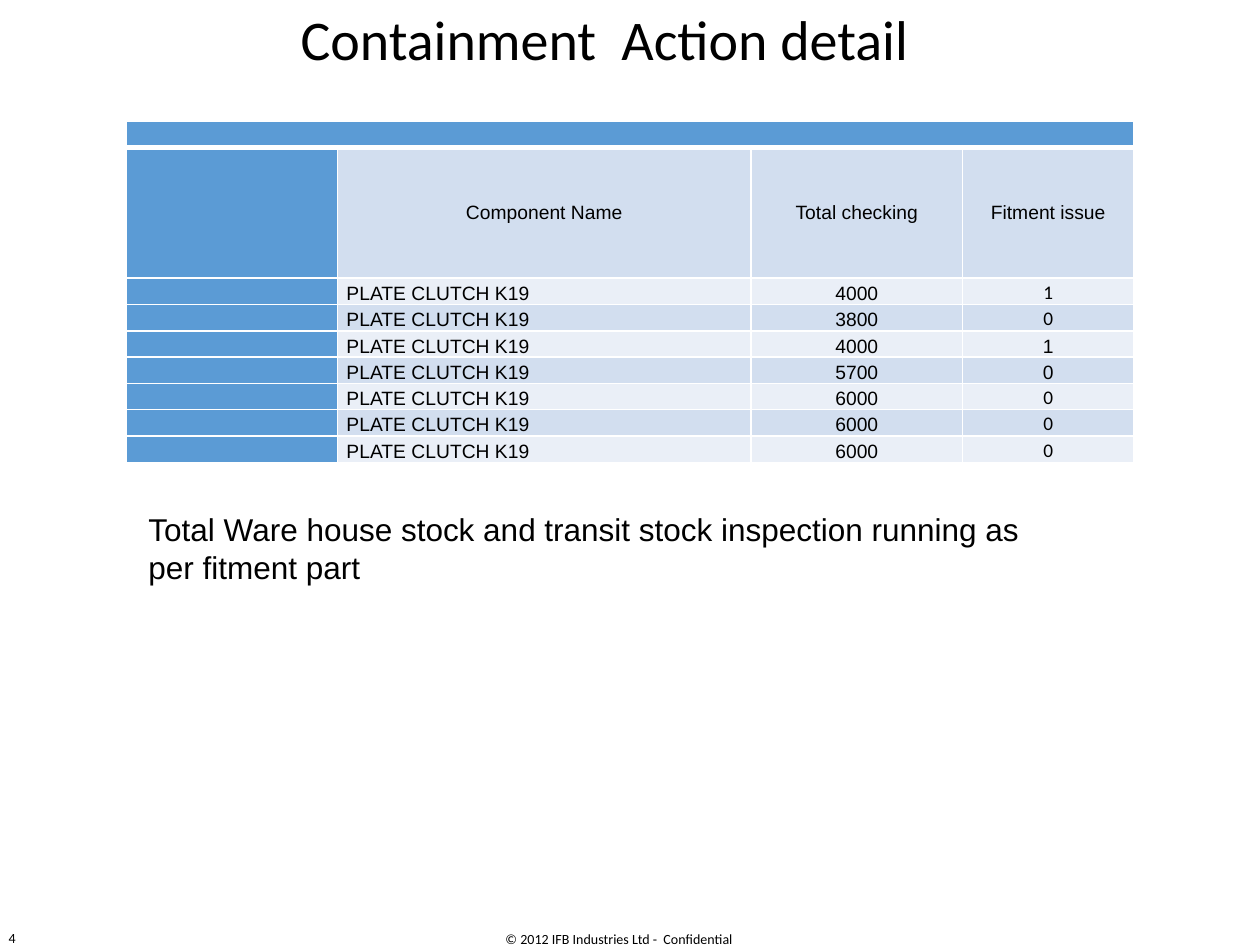
import pptx
import pptx.util
import pptx.dml.color
import pptx.enum.text
import lxml.etree

Inch = pptx.util.Inches
Pt = pptx.util.Pt
Rgb = pptx.dml.color.RGBColor.from_string
Align = pptx.enum.text.PP_ALIGN
Anchor = pptx.enum.text.MSO_ANCHOR

THEME = {
    "ink": "000000", "head": "5B9BD5", "dark": "D2DEEF", "light": "EAEFF7",
    "rule": "FFFFFF", "sans": "Arial", "face": "Calibri",
    "title": 32, "note": 18, "cell": 11, "foot": 8,
}
WIDE, HIGH = 10, 7.5

TITLE = "Containment  Action detail"
NOTE = ("Total Ware house stock and transit stock inspection "
        "running as per fitment part")
FOOT = "© 2012 IFB Industries Ltd -  Confidential"
PAGE = "4"
HEADS = ("Component Name", "Total checking", "Fitment issue")
PART = "PLATE CLUTCH K19"
CHECKS = (
    ("4000", "1", "face"), ("3800", "0", "face"), ("4000", "1", "sans"),
    ("5700", "0", "sans"), ("6000", "0", "face"), ("6000", "0", "face"),
    ("6000", "0", "face"),
)
COLS = (0.21, 0.41, 0.21, 0.17)
TABLE = (WIDE * 0.1, 0.96, WIDE * 0.8, 2.71)
TALL = 1.04


def write(frame, text, size, face, align=Align.LEFT):
    para = frame.paragraphs[0]
    para.alignment = align
    run = para.add_run()
    run.text = text
    run.font.size = Pt(THEME[size])
    run.font.name = THEME[face]
    run.font.bold = False
    run.font.color.rgb = Rgb(THEME["ink"])
    return para


def add_text(slide, area, text, size, face, align=Align.LEFT,
             anchor=Anchor.MIDDLE):
    box = slide.shapes.add_textbox(*map(Inch, area))
    frame = box.text_frame
    frame.word_wrap = True
    frame.vertical_anchor = anchor
    write(frame, text, size, face, align)
    return frame


def add_rules(cell, base):
    props = cell._tc.get_or_add_tcPr()
    ns = "{http://schemas.openxmlformats.org/drawingml/2006/main}"
    for spot, side in enumerate("LRTB"):
        width = base if side == "B" else 1
        line = lxml.etree.Element(ns + "ln" + side, w=str(Pt(width)))
        fill = lxml.etree.SubElement(line, ns + "solidFill")
        lxml.etree.SubElement(fill, ns + "srgbClr", val=THEME["rule"])
        props.insert(spot, line)


def style(cell, fill, anchor, base=1):
    cell.margin_left = cell.margin_right = Inch(0.07)
    cell.margin_top = cell.margin_bottom = 0
    cell.vertical_anchor = anchor
    cell.fill.solid()
    cell.fill.fore_color.rgb = Rgb(THEME[fill])
    add_rules(cell, base)


def add_grid(slide):
    count = len(CHECKS) + 2
    grid = slide.shapes.add_table(count, len(COLS), *map(Inch, TABLE)).table
    grid.first_row = grid.horz_banding = False
    for col, share in zip(grid.columns, COLS):
        col.width = Inch(TABLE[2] * share)
    short = (TABLE[3] - TALL) / (count - 1)
    for num, row in enumerate(grid.rows):
        row.height = Inch(TALL if num == 1 else short)

    body = [[(text, "sans", Align.CENTER) for text in HEADS]]
    for total, issue, face in CHECKS:
        body.append([(PART, "sans", Align.LEFT),
                     (total, "sans", Align.CENTER),
                     (issue, face, Align.CENTER)])
    for num in range(count):
        anchor = Anchor.MIDDLE if num == 1 else Anchor.BOTTOM
        band = "dark" if num % 2 else "light"
        for col in range(len(COLS)):
            cell = grid.cell(num, col)
            blank = num == 0 or col == 0
            style(cell, "head" if blank else band, anchor, 1 if num else 3)
            if blank:
                para = cell.text_frame.paragraphs[0]
                tag = para._p.tag.replace("}p", "}endParaRPr")
                lxml.etree.SubElement(para._p, tag,
                                      sz=str(THEME["cell"] * 100))
            else:
                text, face, align = body[num - 1][col - 1]
                write(cell.text_frame, text, "cell", face, align)
    grid.cell(0, 0).merge(grid.cell(0, len(COLS) - 1))


def main():
    deck = pptx.Presentation()
    deck.slide_width, deck.slide_height = Inch(WIDE), Inch(HIGH)
    slide = deck.slides.add_slide(deck.slide_layouts[6])
    add_text(slide, (-0.03, 7.24, 2.33, 0.4), PAGE, "foot", "face")
    add_text(slide, (2.75, 7.25, 4.33, 0.4), FOOT, "foot", "face",
             Align.CENTER)
    head = add_text(slide, (0, 0, WIDE, 0.67), TITLE, "title", "face",
                    Align.CENTER)
    head.margin_right = Inch(0.5)
    head.paragraphs[0].line_spacing = 0.9
    add_grid(slide)
    add_text(slide, (1.08, 4, 7.42, 0.71), NOTE, "note", "sans",
             anchor=Anchor.TOP)
    deck.save("out.pptx")


if __name__ == "__main__":
    main()
